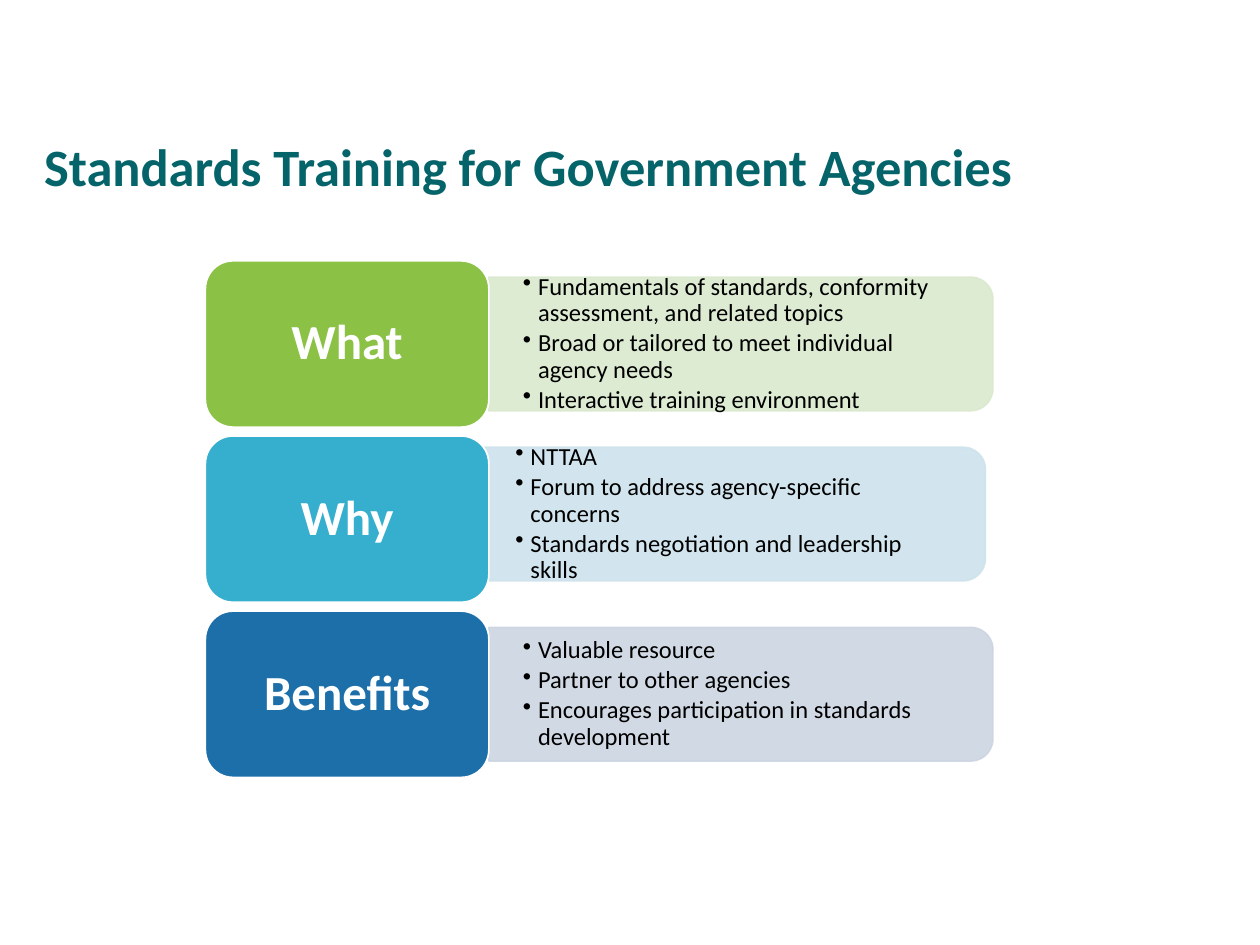
from dataclasses import dataclass

from lxml import etree
from pptx import Presentation
from pptx.dml.color import RGBColor
from pptx.enum import shapes, text
from pptx.oxml.ns import qn
from pptx.util import Inches, Pt


@dataclass(frozen=True)
class Theme:
    """Colours and type sizes of the slide."""
    font: str = "Calibri"
    title: str = "05646A"
    light: str = "FFFFFF"
    dark: str = "000000"
    tiles: tuple = ("8BC145", "36AFCE", "1D6FA9")
    panels: tuple = ("DAE9CF", "CEE3ED", "CDD5E2")
    title_size: int = 30
    label_size: int = 28
    list_size: int = 14


class Deck:
    """Holds the theme and the current slide and draws each kind of element."""

    def __init__(self, prs, theme):
        """Add a title-only slide."""
        self.theme = theme
        self.slide = prs.slides.add_slide(prs.slide_layouts[5])

    def style(self, p, size, color, bold=False):
        """Format a paragraph and its runs."""
        p.line_spacing = 0.9
        for r in p.runs:
            r.font.name = self.theme.font
            r.font.size = Pt(size)
            r.font.bold = bold
            r.font.color.rgb = RGBColor.from_string(color)

    def frame(self, tf, inset_x, inset_y, anchor):
        """Set wrapping, insets and anchor of a text frame."""
        tf.word_wrap = True
        tf.auto_size = text.MSO_AUTO_SIZE.NONE
        tf.margin_left = tf.margin_right = Inches(inset_x)
        tf.margin_top = tf.margin_bottom = Inches(inset_y)
        tf.vertical_anchor = anchor

    def title(self, words, left, top, width, height):
        """Fill and place the title placeholder."""
        sp = self.slide.shapes.title
        sp.left, sp.top = Inches(left), Inches(top)
        sp.width, sp.height = Inches(width), Inches(height)
        self.frame(sp.text_frame, 0.1, 0.05, text.MSO_ANCHOR.TOP)
        p = sp.text_frame.paragraphs[0]
        p.text = words
        p.alignment = text.PP_ALIGN.LEFT
        self.style(p, self.theme.title_size, self.theme.title, True)

    def shape(self, kind, left, top, width, height, fill, line):
        """Draw a filled, outlined preset shape."""
        sp = self.slide.shapes.add_shape(
            kind, Inches(left), Inches(top), Inches(width), Inches(height))
        sp.shadow.inherit = False
        sp.fill.solid()
        sp.fill.fore_color.rgb = RGBColor.from_string(fill)
        sp.line.color.rgb = RGBColor.from_string(line)
        sp.line.width = Pt(1)
        return sp

    def panel(self, left, middle, width, height, color):
        """Draw a translucent panel rounded on its right side."""
        sp = self.shape(
            shapes.MSO_SHAPE.ROUND_2_SAME_RECTANGLE,
            left + (width - height) / 2, middle - width / 2,
            height, width, color, color)
        sp.rotation = 90
        for clr in sp._element.spPr.iter(qn("a:srgbClr")):
            etree.SubElement(clr, qn("a:alpha"), val="90000")

    def bullets(self, items, left, middle, width, height):
        """Write a bulleted list centred on a height."""
        sp = self.slide.shapes.add_textbox(
            Inches(left), Inches(middle - height / 2), Inches(width), Inches(height))
        tf = sp.text_frame
        self.frame(tf, 0.27, 0.14, text.MSO_ANCHOR.MIDDLE)
        tf.text = "\n".join(items)
        for p in tf.paragraphs:
            self.style(p, self.theme.list_size, self.theme.dark)
            p.space_after = Pt(2)
            pPr = p._p.get_or_add_pPr()
            pPr.set("marL", str(Inches(0.12)))
            pPr.set("indent", str(-Inches(0.12)))
            etree.SubElement(pPr, qn("a:buChar"), char="•")

    def tile(self, label, left, top, width, height, color):
        """Draw a rounded tile with its label."""
        sp = self.shape(shapes.MSO_SHAPE.ROUNDED_RECTANGLE,
                        left, top, width, height, color, self.theme.light)
        self.frame(sp.text_frame, 0.19, 0.13, text.MSO_ANCHOR.MIDDLE)
        p = sp.text_frame.paragraphs[0]
        p.text = label
        p.alignment = text.PP_ALIGN.CENTER
        self.style(p, self.theme.label_size, self.theme.light, True)


ROWS = [
    ("What", 0, 0, ["Fundamentals of standards, conformity assessment, and related topics",
                    "Broad or tailored to meet individual agency needs",
                    "Interactive training environment"]),
    ("Why", -0.06, -0.04, ["NTTAA",
                           "Forum to address agency-specific concerns",
                           "Standards negotiation and leadership skills"]),
    ("Benefits", 0, 0, ["Valuable resource",
                        "Partner to other agencies",
                        "Encourages participation in standards development"]),
]


def main():
    """Build and save the slide."""
    prs = Presentation()
    prs.slide_width, prs.slide_height = Inches(10), Inches(7.5)
    theme = Theme()
    deck = Deck(prs, theme)
    deck.title("Standards Training for Government Agencies", 0.25, 1.07, 7.94, 4.95)

    left, top, width, height, pitch = 1.63, 2.07, 2.25, 1.32, 1.39
    for i, (label, dx, dy, items) in enumerate(ROWS):
        row_top = top + i * pitch
        panel_left = left + width + dx
        middle = row_top + height / 2 + dy
        deck.panel(panel_left, middle, 4, 1.06, theme.panels[i])
        deck.bullets(items, panel_left, middle, 3.95, 0.95)
        deck.tile(label, left, row_top, width, height, theme.tiles[i])
    prs.save("out.pptx")


if __name__ == "__main__":
    main()
